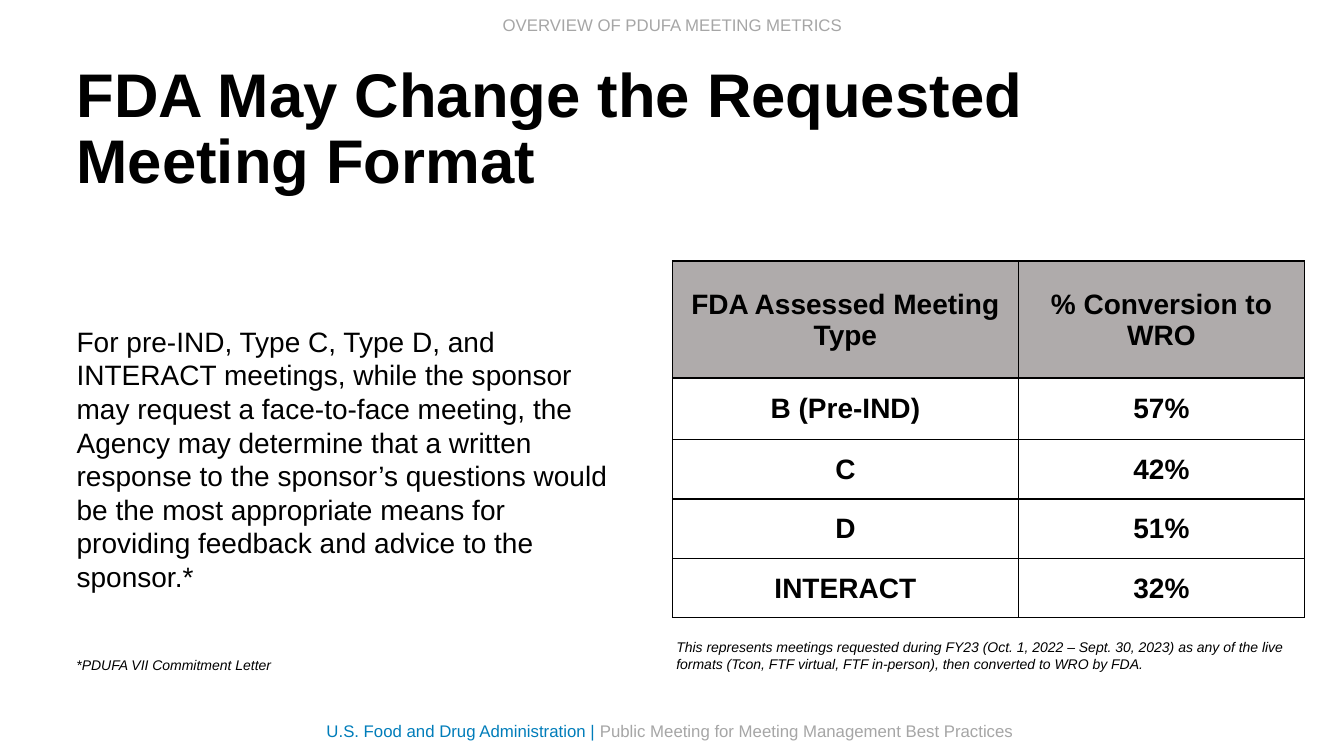
from dataclasses import dataclass

import pptx
import pptx.dml.color
import pptx.enum.text
import pptx.oxml
import pptx.oxml.ns
import pptx.util
from pptx.util import Inches

Align = pptx.enum.text.PP_ALIGN
Anchor = pptx.enum.text.MSO_ANCHOR


@dataclass(frozen=True)
class Theme:
    font: str = "Arial"
    ink: str = "000000"
    muted: str = "A6A6A6"
    accent: str = "007DBA"
    header_fill: str = "AFABAB"
    cell_fill: str = "FFFFFF"
    title_size: int = 44
    body_size: int = 20
    footer_size: int = 12
    note_size: int = 10
    border_width: int = 1


THEME = Theme()

TITLE = "FDA May Change the Requested Meeting Format"
BODY = (
    "For pre-IND, Type C, Type D, and INTERACT meetings, while the sponsor may "
    "request a face-to-face meeting, the Agency may determine that a written "
    "response to the sponsor’s questions would be the most appropriate means for "
    "providing feedback and advice to the sponsor.*"
)
CONVERSIONS = [
    ("FDA Assessed Meeting Type", "% Conversion to WRO"),
    ("B (Pre-IND)", "57%"),
    ("C", "42%"),
    ("D", "51%"),
    ("INTERACT", "32%"),
]
COLUMN_WIDTHS = (3.43, 2.84)
ROW_HEIGHTS = (1.16, 0.61, 0.59, 0.59, 0.59)
TABLE_NOTE = (
    "This represents meetings requested during FY23 (Oct. 1, 2022 – Sept. 30, 2023) "
    "as any of the live formats (Tcon, FTF virtual, FTF in-person), then converted "
    "to WRO by FDA."
)
SOURCE_NOTE = "*PDUFA VII Commitment Letter"
SECTION = "OVERVIEW OF PDUFA MEETING METRICS"
AGENCY = "U.S. Food and Drug Administration | "
EVENT = "Public Meeting for Meeting Management Best Practices"

LEFT = 0.66
TITLE_BOX = (LEFT, 0.57, 11.5, 1.45)
BODY_BOX = (LEFT, 2.17, 5.61, 4.76)
TABLE_POSITION = (6.67, 2.59)
TEXT_BOXES = [
    ((6.61, 6.29, 6.27, 0.44), Align.LEFT, THEME.note_size, True, [(TABLE_NOTE, THEME.ink)]),
    ((LEFT, 6.46, 5.31, 0.27), Align.LEFT, THEME.note_size, True, [(SOURCE_NOTE, THEME.ink)]),
    ((4.12, 0.1, 5.1, 0.3), Align.CENTER, THEME.footer_size, False, [(SECTION, THEME.muted)]),
    ((3.14, 7.1, 7.06, 0.3), Align.LEFT, THEME.footer_size, False,
     [(AGENCY, THEME.accent), (EVENT, THEME.muted)]),
]


def format_run(run, size, color=THEME.ink, bold=False, italic=False):
    run.font.name = THEME.font
    run.font.size = pptx.util.Pt(size)
    run.font.bold = bold
    run.font.italic = italic
    run.font.color.rgb = pptx.dml.color.RGBColor.from_string(color)


def fill_placeholder(shape, box, text, size, bold=False):
    shape.left, shape.top, shape.width, shape.height = map(Inches, box)
    frame = shape.text_frame
    frame.text = text
    frame.word_wrap = True
    frame.auto_size = pptx.enum.text.MSO_AUTO_SIZE.NONE
    frame.vertical_anchor = Anchor.MIDDLE
    paragraph = frame.paragraphs[0]
    paragraph.alignment = Align.LEFT
    format_run(paragraph.runs[0], size, bold=bold)
    return paragraph


def remove_bullet(paragraph):
    properties = paragraph._p.get_or_add_pPr()
    properties.set("marL", "0")
    properties.set("indent", "0")
    properties.append(pptx.oxml.parse_xml(f'<a:buNone {pptx.oxml.ns.nsdecls("a")}/>'))


def add_text_box(slide, box, alignment, size, italic, parts):
    frame = slide.shapes.add_textbox(*map(Inches, box)).text_frame
    frame.word_wrap = True
    paragraph = frame.paragraphs[0]
    paragraph.alignment = alignment
    for text, color in parts:
        run = paragraph.add_run()
        run.text = text
        format_run(run, size, color, italic=italic)


def add_borders(cell):
    properties = cell._tc.get_or_add_tcPr()
    width = pptx.util.Pt(THEME.border_width)
    for side in ("lnL", "lnR", "lnT", "lnB"):
        properties.append(pptx.oxml.parse_xml(
            f'<a:{side} {pptx.oxml.ns.nsdecls("a")} w="{width}"><a:solidFill>'
            f'<a:srgbClr val="{THEME.ink}"/></a:solidFill></a:{side}>'
        ))


def format_cell(cell, text, fill):
    add_borders(cell)
    cell.fill.solid()
    cell.fill.fore_color.rgb = pptx.dml.color.RGBColor.from_string(fill)
    cell.vertical_anchor = Anchor.MIDDLE
    cell.margin_left = cell.margin_right = cell.margin_top = Inches(0.01)
    cell.margin_bottom = 0
    cell.text_frame.text = text
    paragraph = cell.text_frame.paragraphs[0]
    paragraph.alignment = Align.CENTER
    format_run(paragraph.runs[0], THEME.body_size, bold=True)


def add_conversion_table(slide):
    size = (sum(COLUMN_WIDTHS), sum(ROW_HEIGHTS))
    table = slide.shapes.add_table(
        len(CONVERSIONS), len(COLUMN_WIDTHS), *map(Inches, TABLE_POSITION + size)
    ).table
    table.horz_banding = False
    for column, width in zip(table.columns, COLUMN_WIDTHS):
        column.width = Inches(width)
    for row_index, (row, height, texts) in enumerate(zip(table.rows, ROW_HEIGHTS, CONVERSIONS)):
        row.height = Inches(height)
        fill = THEME.cell_fill if row_index else THEME.header_fill
        for cell, text in zip(row.cells, texts):
            format_cell(cell, text, fill)


def main():
    presentation = pptx.Presentation()
    presentation.slide_width = Inches(13.33)
    presentation.slide_height = Inches(7.5)
    slide = presentation.slides.add_slide(presentation.slide_layouts[1])

    title = fill_placeholder(slide.shapes.title, TITLE_BOX, TITLE, THEME.title_size, bold=True)
    title.line_spacing = 0.9

    body = fill_placeholder(slide.placeholders[1], BODY_BOX, BODY, THEME.body_size)
    body.space_before = body.space_after = pptx.util.Pt(6)
    remove_bullet(body)

    add_conversion_table(slide)
    for text_box in TEXT_BOXES:
        add_text_box(slide, *text_box)

    presentation.save("out.pptx")


if __name__ == "__main__":
    main()
